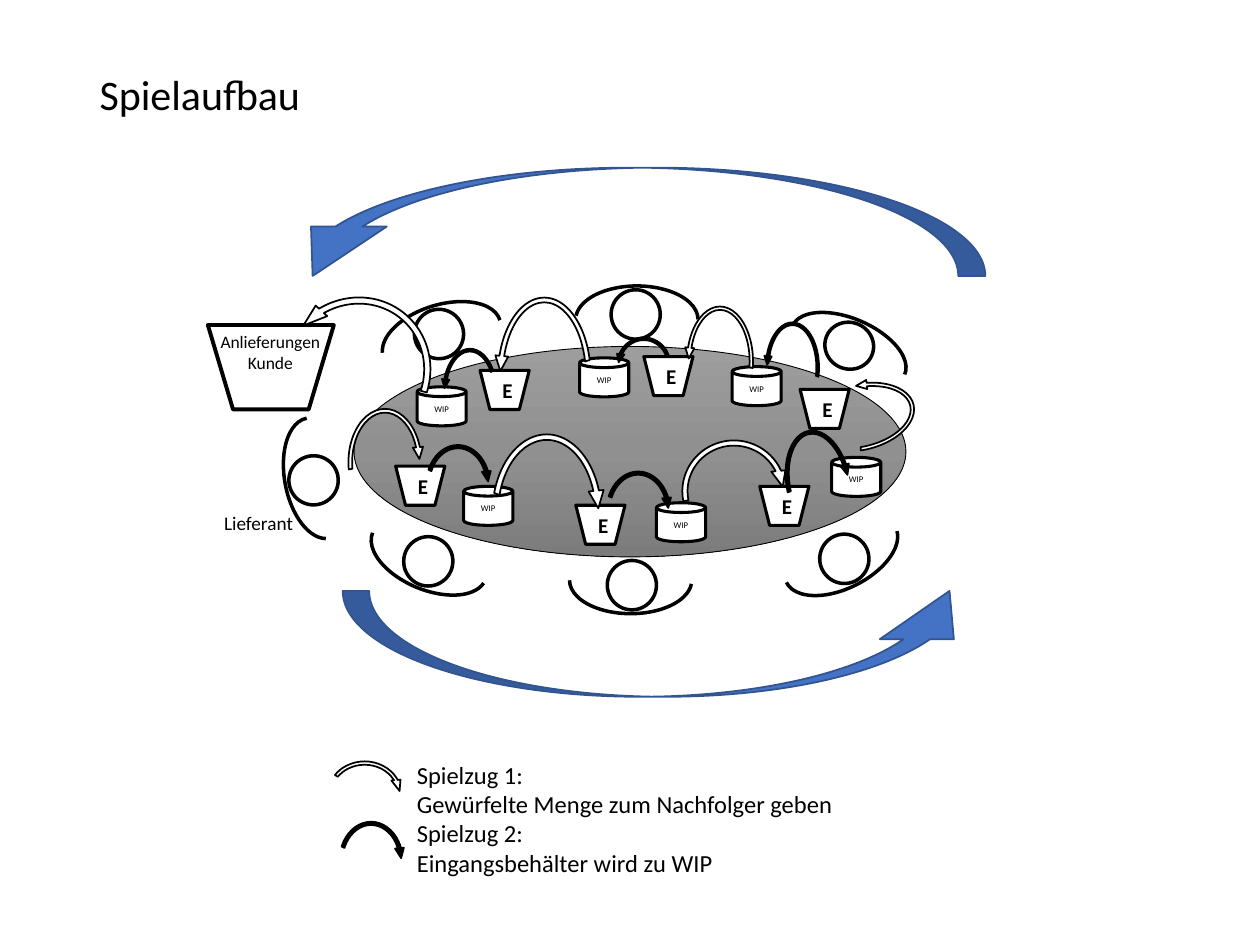
from copy import deepcopy

from pptx import Presentation
from pptx.dml.color import RGBColor
from pptx.enum.shapes import MSO_SHAPE
from pptx.enum.text import MSO_ANCHOR, MSO_AUTO_SIZE, PP_ALIGN
from pptx.oxml.ns import qn
from pptx.util import Inches, Pt

BLACK = RGBColor(0x00, 0x00, 0x00)
WHITE = RGBColor(0xFF, 0xFF, 0xFF)
BLUE = RGBColor(0x44, 0x72, 0xC4)
DARK_BLUE = RGBColor(0x32, 0x54, 0x91)
TABLE_GREYS = (
    RGBColor(0x9D, 0x9D, 0x9D),
    RGBColor(0x90, 0x90, 0x90),
    RGBColor(0x7C, 0x7C, 0x7C),
)

CONTAINER_SIZE = (0.39, 0.31)
WIP_POSITIONS = [(3.31, 3.07), (4.6, 2.84), (3.68, 3.86), (5.21, 3.99), (6.6, 3.63), (5.81, 2.91)]
INPUT_POSITIONS = [(3.14, 3.7), (4.57, 4.01), (6.03, 3.86), (3.81, 2.94), (5.11, 2.83), (6.35, 3.09)]

PLAYERS = [
    (2.92, 4.15, 0.53, 202.7),
    (3.02, 2.42, 0.53, 342.8),
    (4.57, 2.27, 0.53, 0),
    (6.25, 2.53, 0.5, 23.4),
    (6.19, 4.14, 0.53, 153.4),
    (4.52, 4.34, 0.53, 180),
    (2.04, 3.53, 0.53, 259.3),
]

FIRST_MOVES = [
    ((2.74, 3.22, 0.63, 0.9), 101.35, 0, False),
    ((3.87, 3.41, 0.94, 1.33), 120.7, 0, False),
    ((5.38, 3.46, 0.89, 0.88), 101.35, 0, False),
    ((6.54, 2.85, 0.57, 0.92), 101.35, 77.3, True),
    ((5.43, 2.41, 0.57, 0.92), 101.35, 0, True),
    ((3.92, 2.33, 0.8, 1.3), 119.28, 0, True),
]
SECOND_MOVES = [
    ((3.36, 3.51, 0.55, 0.67), 123.89, 0, False),
    ((4.79, 3.72, 0.55, 0.67), 123.89, 0, False),
    ((6.22, 3.39, 0.55, 0.89), 104.47, 349.5, False),
    ((6.06, 2.54, 0.46, 0.75), 95.97, 0, True),
    ((4.88, 2.66, 0.46, 0.47), 119.66, 0, True),
    ((3.5, 2.75, 0.46, 0.7), 132.77, 0, True),
]
DELIVERY_BEND = (0.04, 11.42, 204.59, 124.27, 0.05)


def move_bend(start):
    return (0.047, 11.42, 201.23, start, 0.064)


def set_format(target, values):
    for name, value in values.items():
        setattr(target, name, value)


def add_outline(parent, kind, box, line_width, fill=WHITE, line=BLACK, bend=()):
    shape = parent.shapes.add_shape(kind, *map(Inches, box))
    shape.shadow.inherit = False
    if fill is None:
        shape.fill.background()
    else:
        shape.fill.solid()
        shape.fill.fore_color.rgb = fill
    shape.line.color.rgb = line
    shape.line.width = Pt(line_width)
    for index, value in enumerate(bend):
        shape.adjustments[index] = value
    return shape


def write_lines(shape, lines, size, alignment=PP_ALIGN.LEFT, bold=False):
    frame = shape.text_frame
    frame.text = "\n".join(lines)
    for paragraph in frame.paragraphs:
        paragraph.alignment = alignment
        set_format(paragraph.font, {"name": "Calibri", "size": Pt(size), "bold": bold})
        paragraph.font.color.rgb = BLACK


def add_label(slide, box, lines, size, alignment=PP_ALIGN.LEFT):
    label = slide.shapes.add_textbox(*map(Inches, box))
    write_lines(label, lines, size, alignment)
    set_format(label.text_frame, {"word_wrap": False, "auto_size": MSO_AUTO_SIZE.SHAPE_TO_FIT_TEXT})


def place_title(slide, box):
    title = slide.shapes.title
    set_format(title, dict(zip(("left", "top", "width", "height"), map(Inches, box))))
    write_lines(title, ["Spielaufbau"], 24)
    set_format(title.text_frame, {"vertical_anchor": MSO_ANCHOR.MIDDLE, "auto_size": MSO_AUTO_SIZE.NONE})
    title.text_frame.paragraphs[0].line_spacing = 0.9


def add_table_top(slide, box):
    table_top = add_outline(slide, MSO_SHAPE.OVAL, box, 0.5)
    fill = table_top.fill
    fill.gradient()
    fill.gradient_angle = 270
    first_stop = table_top.element.spPr.find(qn("a:gradFill")).find(qn("a:gsLst"))[0]
    first_stop.addnext(deepcopy(first_stop))
    for index, (stop, grey) in enumerate(zip(fill.gradient_stops, TABLE_GREYS)):
        stop.position = index / 2
        stop.color.rgb = grey


def add_player(slide, left, top, height, rotation):
    player = slide.shapes.add_group_shape()
    head = (left + 0.28, top + 0.03, 0.39, height * 0.74)
    add_outline(player, MSO_SHAPE.OVAL, head, 2)
    add_outline(player, MSO_SHAPE.ARC, (left, top, 0.97, height), 2, fill=None, bend=(110.05, 0))
    player.rotation = rotation


def add_containers(slide, kind, positions, name, size, bold):
    for position in positions:
        container = add_outline(slide, kind, position + CONTAINER_SIZE, 1.75)
        write_lines(container, [name], size, PP_ALIGN.CENTER, bold)
        container.text_frame.vertical_anchor = MSO_ANCHOR.MIDDLE


def add_direction(slide, box, rotation):
    arrow = add_outline(
        slide, MSO_SHAPE.CURVED_UP_ARROW, box, 1, BLUE, DARK_BLUE, (0.25, 0.7, 0.456)
    )
    arrow.rotation = rotation


def add_customer(slide, box):
    left, top, width, height = box
    add_outline(slide, MSO_SHAPE.FLOWCHART_MANUAL_OPERATION, box, 2.25)
    label_box = (left - 0.03, top, width + 0.05, height + 0.17)
    add_label(slide, label_box, ["Anlieferungen", "Kunde"], 10, PP_ALIGN.CENTER)


def add_move(slide, box, bend, fill, rotation=0, mirrored=False):
    arrow = add_outline(slide, MSO_SHAPE.CIRCULAR_ARROW, box, 1, fill, bend=bend)
    arrow.rotation = rotation
    if mirrored:
        arrow.element.spPr.xfrm.set("flipH", "1")


def add_moves(slide, moves, fill):
    for box, start, rotation, mirrored in moves:
        add_move(slide, box, move_bend(start), fill, rotation, mirrored)


def add_legend(slide, box):
    left, top, width, height = box
    add_move(slide, (left, top + 0.04, 0.63, 0.57), move_bend(127.91), WHITE)
    add_move(slide, (left + 0.09, top + 0.52, 0.55, 0.67), move_bend(123.89), BLACK)
    lines = [
        "Spielzug 1:",
        "Gewürfelte Menge zum Nachfolger geben",
        "Spielzug 2:",
        "Eingangsbehälter wird zu WIP",
    ]
    add_label(slide, (left + 0.63, top, width - 0.63, height), lines, 14)


def main():
    presentation = Presentation()
    set_format(presentation, {"slide_width": Inches(10), "slide_height": Inches(7.5)})
    slide = presentation.slides.add_slide(presentation.slide_layouts[5])

    place_title(slide, (0.69, 0.4, 8.62, 0.73))
    add_table_top(slide, (2.81, 2.75, 4.38, 1.67))
    for player in PLAYERS:
        add_player(slide, *player)
    add_containers(slide, MSO_SHAPE.CAN, WIP_POSITIONS, "WIP", 5, False)
    add_containers(slide, MSO_SHAPE.FLOWCHART_MANUAL_OPERATION, INPUT_POSITIONS, "E", 12, True)
    add_direction(slide, (2.72, 4.69, 5.11, 0.84), 0)
    add_direction(slide, (2.18, 1.33, 5.64, 0.86), 180)
    add_customer(slide, (1.65, 2.58, 1, 0.67))
    add_moves(slide, FIRST_MOVES, WHITE)
    add_move(slide, (2.2, 2.31, 1.24, 1.3), DELIVERY_BEND, WHITE, 42.4, True)
    add_label(slide, (1.68, 4.01, 0.76, 0.29), ["Lieferant"], 11)
    add_moves(slide, SECOND_MOVES, BLACK)
    add_legend(slide, (2.58, 5.98, 4.16, 1.04))

    presentation.save("out.pptx")


if __name__ == "__main__":
    main()
